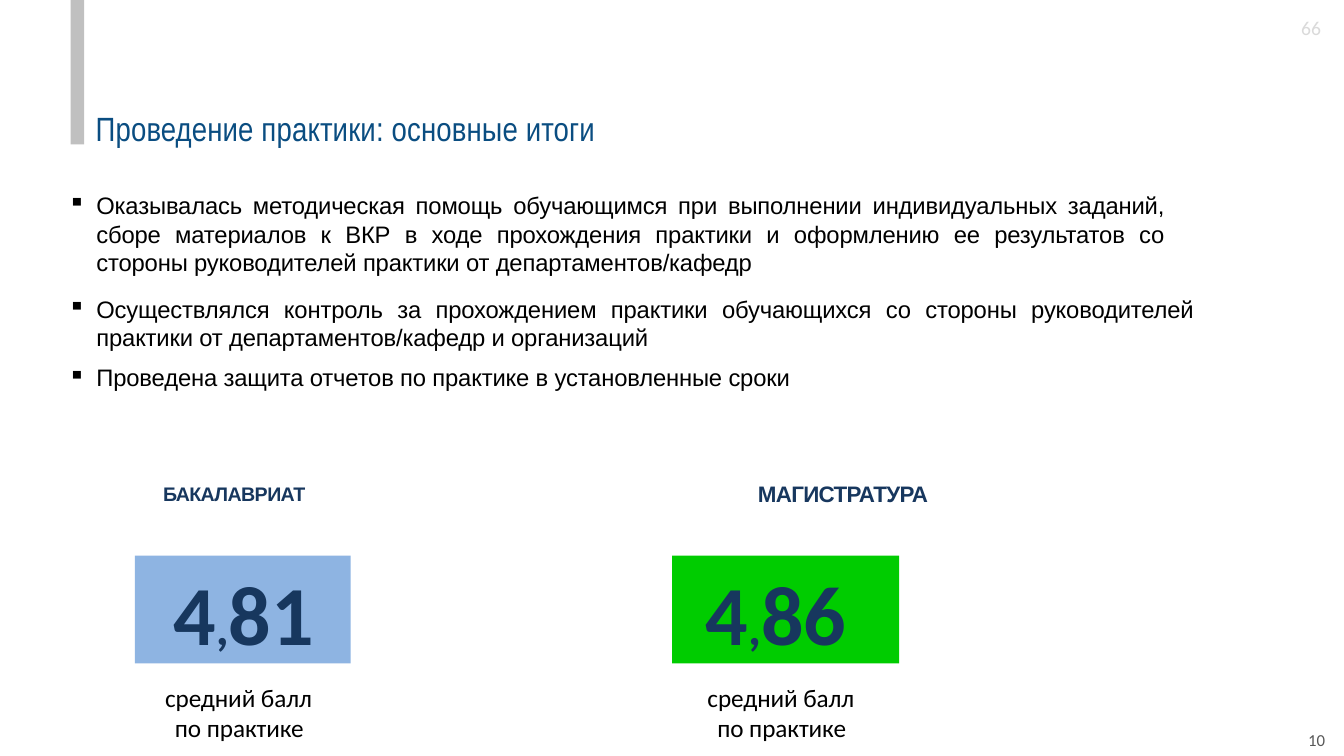
"""Build the slide on the main results of student practice."""
import pptx
import pptx.util
import pptx.dml.color
import pptx.enum.shapes
import pptx.enum.text
import lxml.etree

Cm, Pt = pptx.util.Cm, pptx.util.Pt
Align = pptx.enum.text.PP_ALIGN
Anchor = pptx.enum.text.MSO_ANCHOR
RECT = pptx.enum.shapes.MSO_SHAPE.RECTANGLE
NAVY, BLUE, BLACK = "17375E", "0A4D81", "000000"


def color(code):
    return pptx.dml.color.RGBColor.from_string(code)


class Page:
    def __init__(self, slide):
        self.slide = slide

    def style(self, para, face, size, code, bold=False, space=0):
        for run in para.runs:
            font = run.font
            font.name, font.size, font.bold = face, Pt(size), bold
            font.color.rgb = color(code)
            run._r.get_or_add_rPr().set("spc", str(round(space * 100)))

    def frame(self, shape, top=0.03):
        frame = shape.text_frame
        frame.word_wrap = True
        frame.auto_size = pptx.enum.text.MSO_AUTO_SIZE.NONE
        frame.vertical_anchor = Anchor.TOP
        frame.margin_left = frame.margin_right = frame.margin_bottom = 0
        frame.margin_top = Cm(top)
        return frame

    def indent(self, para, left, first=0, right=0):
        props = para._p.get_or_add_pPr()
        for key, size in (("marL", left), ("indent", first), ("marR", right)):
            props.set(key, str(int(Cm(size))))
        return props

    def title(self, text, *box):
        shape = self.slide.shapes.title
        shape.left, shape.top, shape.width, shape.height = map(Cm, box)
        frame = self.frame(shape)
        frame.text = text
        para = frame.paragraphs[0]
        para.alignment = Align.LEFT
        para.line_spacing = 1.0
        para.space_before = Pt(1)
        self.style(para, "Arial Narrow", 24, BLUE, space=0.1)

    def text(self, text, box, face, size, code, bold=False, space=0):
        frame = self.frame(self.slide.shapes.add_textbox(*map(Cm, box)))
        frame.text = text
        para = frame.paragraphs[0]
        para.space_before = Pt(1)
        self.style(para, face, size, code, bold, space)
        return para

    def block(self, fill, *box):
        shape = self.slide.shapes.add_shape(RECT, *map(Cm, box))
        shape.shadow.inherit = False
        shape.fill.solid()
        shape.fill.fore_color.rgb = color(fill)
        shape.line.fill.background()
        return shape

    def score(self, value, fill, box, left):
        frame = self.frame(self.block(fill, *box), 0.15)
        para = frame.paragraphs[0]
        para.alignment = Align.LEFT
        para.space_before = Pt(4.2)
        self.indent(para, left)
        for part in value.partition(","):
            para.add_run().text = part
        self.style(para, "Calibri", 60, NAVY, True, -0.1)
        para.runs[1].font.size = Pt(36)

    def list(self, items, *box):
        frame = self.frame(self.slide.shapes.add_textbox(*map(Cm, box)))
        frame.text = "\n".join(text for text, gap, right in items)
        for para, (text, gap, right) in zip(frame.paragraphs, items):
            para.alignment = Align.JUSTIFY
            para.space_before = Pt(gap)
            props = self.indent(para, 0.78, -0.71, right)
            mark = lxml.etree.SubElement(props, pptx.oxml.ns.qn("a:buChar"))
            mark.set("char", "▪")
            self.style(para, "Arial", 17, BLACK, space=-0.15)


def main():
    deck = pptx.Presentation()
    deck.slide_width, deck.slide_height = Cm(33.87), Cm(19.05)
    page = Page(deck.slides.add_slide(deck.slide_layouts[5]))

    page.block("C0C0C0", 1.78, 0, 0.34, 3.64)
    page.title("Проведение практики: основные итоги", 2.41, 2.69, 14, 1.09)
    top = page.text("66", (32.79, 0.5, 0.6, 0.51), "Calibri", 14, "DADADA")
    top.line_spacing = Pt(13.3)
    page.text("10", (32.97, 18.36, 0.6, 0.58), "Calibri", 12, "585858")

    page.list([
        ("Оказывалась методическая помощь обучающимся при выполнении "
         "индивидуальных заданий, сборе материалов к ВКР в ходе прохождения "
         "практики и оформлению ее результатов со стороны руководителей "
         "практики от департаментов/кафедр", 1.1, 0.74),
        ("Осуществлялся контроль за прохождением практики обучающихся со "
         "стороны руководителей практики от департаментов/кафедр и "
         "организаций", 12.7, 0),
        ("Проведена защита отчетов по практике в установленные сроки", 8.3, 0),
    ], 1.65, 4.78, 28.42, 5.3)

    levels = [
        ("БАКАЛАВРИАТ", 4.11, 14, "4,81", "8EB4E2", 3.4, 5.44, 0.97, 4.11),
        ("МАГИСТРАТУРА", 19.1, 16, "4,86", "00CC00", 16.94, 5.72, 0.84, 17.78),
    ]
    for name, head, size, value, fill, left, width, pad, note in levels:
        para = page.text(name, (head, 12.05, 5.5, 0.75), "Arial", size,
                         NAVY, True, -0.45)
        para._parent.vertical_anchor = Anchor.MIDDLE
        page.score(value, fill, (left, 14, width, 2.72), pad)
        para = page.text("средний балл по практике", (note, 17.17, 4.1, 1.6),
                         "Calibri", 18, BLACK, space=-0.05)
        page.indent(para, 0.3, -0.25)

    deck.save("out.pptx")


if __name__ == "__main__":
    main()
